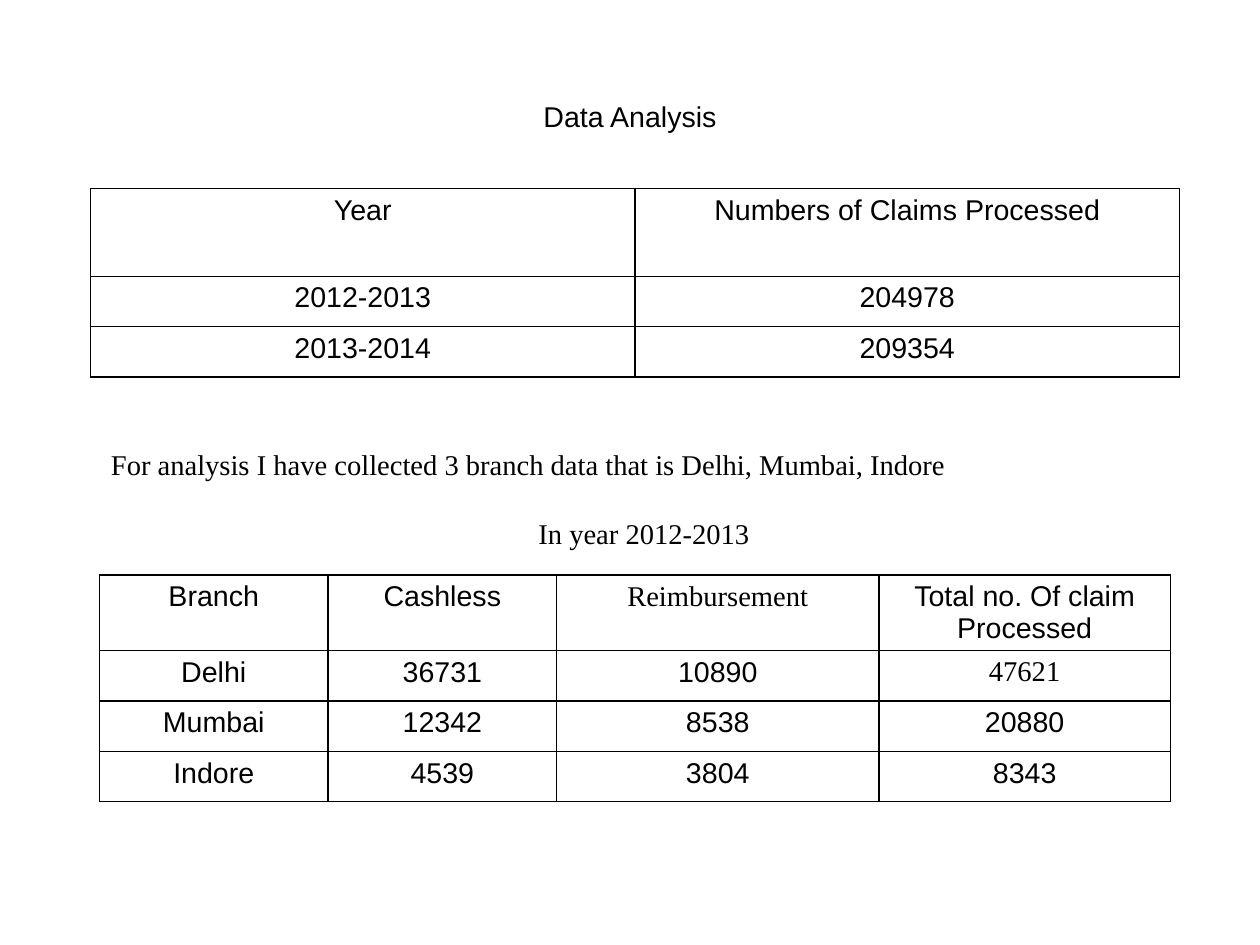
from lxml import etree
from pptx import Presentation
from pptx.dml.color import RGBColor
from pptx.enum import text as t
from pptx.oxml import ns
from pptx.util import Cm, Pt

BLACK = RGBColor(0, 0, 0)
SANS, SERIF = "Arial", "Times New Roman"

HEADING = "Data Analysis"
INTRO = "For analysis I have collected 3 branch data that is Delhi, Mumbai, Indore"
PERIOD = "In year 2012-2013"
YEARLY = {
    "place": (2.01, 4.19),
    "widths": [12.1, 12.1],
    "heights": [1.95, 1.12, 1.12],
    "rows": [
        ("Year", "Numbers of Claims Processed"),
        ("2012-2013", "204978"),
        ("2013-2014", "209354"),
    ],
}
BRANCHES = {
    "place": (2.21, 12.78),
    "widths": [5.08, 5.08, 7.16, 6.48],
    "heights": [1.67, 1.12, 1.12, 1.12],
    "rows": [
        ("Branch", "Cashless", "Reimbursement", "Total no. Of claim Processed"),
        ("Delhi", "36731", "10890", "47621"),
        ("Mumbai", "12342", "8538", "20880"),
        ("Indore", "4539", "3804", "8343"),
    ],
}
SERIF_CELLS = {"Reimbursement", "47621"}


def write(paragraph, words, font=SANS, align=t.PP_ALIGN.CENTER, before=0):
    paragraph.alignment = align
    paragraph.space_before = Pt(before)
    run = paragraph.add_run()
    run.text = words
    run.font.name = font
    run.font.size = Pt(18)
    run.font.color.rgb = BLACK


def move(placeholder, left, top, width, height):
    placeholder.left, placeholder.top = Cm(left), Cm(top)
    placeholder.width, placeholder.height = Cm(width), Cm(height)
    placeholder.text_frame.auto_size = t.MSO_AUTO_SIZE.NONE


def remove_bullet(paragraph):
    properties = paragraph._p.get_or_add_pPr()
    properties.set("marL", "0")
    properties.set("indent", "0")
    etree.SubElement(properties, ns.qn("a:buNone"))


def outline(cell):
    """Give the cell a thin black line on all four sides."""
    properties = cell._tc.get_or_add_tcPr()
    for position, side in enumerate(("lnL", "lnR", "lnT", "lnB")):
        border = etree.Element(ns.qn(f"a:{side}"), w=str(Pt(1)))
        fill = etree.SubElement(border, ns.qn("a:solidFill"))
        etree.SubElement(fill, ns.qn("a:srgbClr"), val=str(BLACK))
        properties.insert(position, border)


def add_grid(slide, place, widths, heights, rows):
    left, top = place
    table = slide.shapes.add_table(
        len(rows), len(widths), Cm(left), Cm(top), Cm(sum(widths)), Cm(sum(heights))
    ).table
    table.first_row = table.horz_banding = False
    for column, width in zip(table.columns, widths):
        column.width = Cm(width)
    for row, height, values in zip(table.rows, heights, rows):
        row.height = Cm(height)
        for cell, value in zip(row.cells, values):
            cell.fill.background()
            outline(cell)
            font = SERIF if value in SERIF_CELLS else SANS
            write(cell.text_frame.paragraphs[0], value, font=font)


def main():
    deck = Presentation()
    deck.slide_width, deck.slide_height = Cm(28), Cm(21)
    slide = deck.slides.add_slide(deck.slide_layouts[1])

    heading, intro = slide.placeholders
    move(heading, 1.4, 0.84, 25.2, 3.5)
    heading.text_frame.vertical_anchor = t.MSO_ANCHOR.MIDDLE
    write(heading.text_frame.paragraphs[0], HEADING)

    move(intro, 2.21, 9.8, 24.2, 2.7)
    first = intro.text_frame.paragraphs[0]
    write(first, INTRO, font=SERIF, align=t.PP_ALIGN.LEFT)
    second = intro.text_frame.add_paragraph()
    write(second, PERIOD, font=SERIF, before=22)
    for paragraph in (first, second):
        remove_bullet(paragraph)

    for grid in (YEARLY, BRANCHES):
        add_grid(slide, **grid)
    deck.save("out.pptx")


if __name__ == "__main__":
    main()
